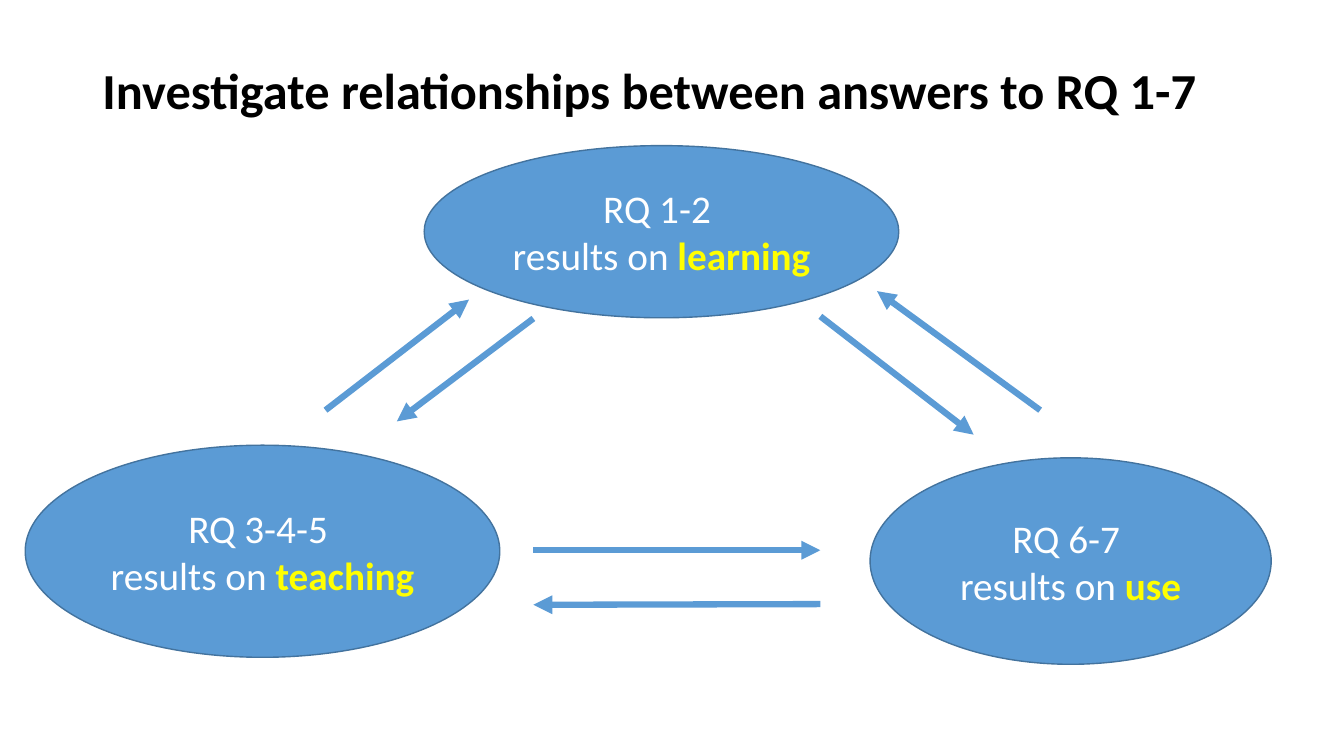
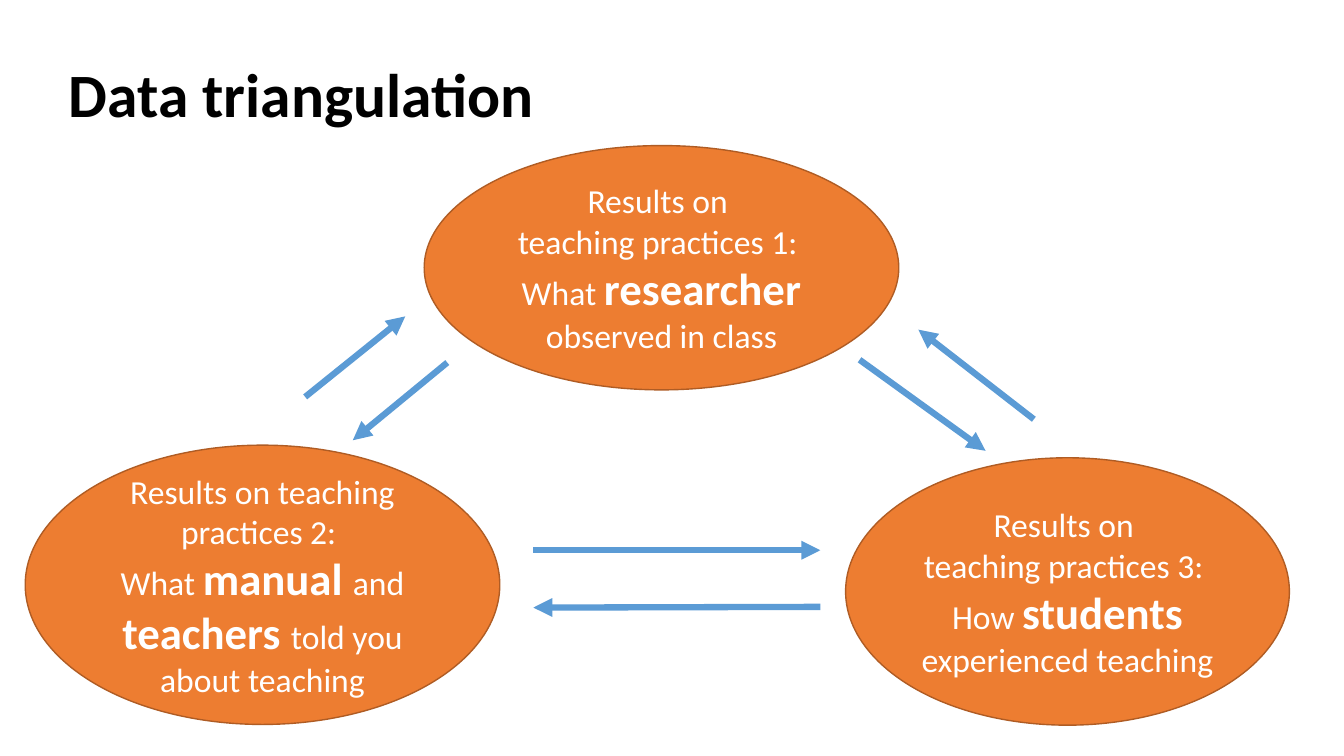
from lxml.etree import SubElement
from pptx import Presentation
from pptx.dml.color import RGBColor
from pptx.enum.shapes import MSO_CONNECTOR, MSO_SHAPE
from pptx.enum.text import MSO_ANCHOR, MSO_AUTO_SIZE, PP_ALIGN
from pptx.oxml.ns import qn
from pptx.util import Pt

COLORS = {
    "title": "000000", "text": "FFFFFF", "highlight": "FFFF00", "arrow": "5B9BD5",
    "blue": "5B9BD5", "blue_edge": "43739E",
    "orange": "ED7D31", "orange_edge": "AF5C24",
}
FONT = "Calibri"

# Content: each ellipse has a box (left, top, width, height) and paragraphs;
# each paragraph is a list of spans, where a one-item tuple is emphasised.
# Arrows run from (x, y) to (x, y).
SLIDES = [
    {
        "title": "Investigate relationships between answers to RQ 1-7",
        "title_box": (66, 29, 828, 75), "title_size": 36,
        "fill": "blue", "size": 28, "strong_size": 28, "strong_color": "highlight",
        "ellipses": [
            ((303, 104, 339, 123),
             [["RQ 1-2 "], ["results on ", ("learning",)]]),
            ((18, 318, 339, 151.5),
             [["RQ 3-4-5 "], ["results on ", ("teaching",)]]),
            ((621.5, 327, 286.5, 147.5),
             [["RQ 6-7 "], ["results on ", ("use",)]]),
        ],
        "arrows": [
            (232.5, 293, 335, 214), (381, 227.5, 283.5, 301),
            (586, 226, 695.5, 310.5), (743, 293, 626.5, 208),
            (381, 393, 586, 393), (586, 431.5, 381, 432),
        ],
    },
    {
        "title": "Data triangulation",
        "title_box": (42, 29, 852, 82), "title_size": 44,
        "fill": "orange", "size": 24, "strong_size": 32, "strong_color": "text",
        "ellipses": [
            ((303, 104, 339, 174.5),
             [["Results on "], ["teaching practices 1: "],
              ["What ", ("researcher ",), "observed in class"]]),
            ((18, 318, 339, 199.5),
             [["Results on teaching practices 2: "],
              ["What ", ("manual ",), "and ", ("teachers ",),
               "told you about teaching"]]),
            ((604, 327, 317, 191),
             [["Results on "], ["teaching practices 3: "],
              ["How ", ("students ",), "experienced teaching "]]),
        ],
        "arrows": [
            (218, 283.5, 289.5, 226), (319.5, 259, 252, 314.5),
            (614, 257, 704, 322), (738.5, 299.5, 656, 235.5),
            (381, 393, 586, 393), (586, 433.5, 381, 434),
        ],
    },
]


def color(name):
    return RGBColor.from_string(COLORS[name])


def add_span(para, text, size, color_name, bold=False):
    span = para.add_run()
    span.text = text
    span.font.name = FONT
    span.font.size = Pt(size)
    span.font.bold = bold
    span.font.color.rgb = color(color_name)


def set_title(page, content):
    title = page.shapes.title
    title.left, title.top, title.width, title.height = map(Pt, content["title_box"])
    frame = title.text_frame
    frame.auto_size = MSO_AUTO_SIZE.NONE
    frame.vertical_anchor = MSO_ANCHOR.MIDDLE
    para = frame.paragraphs[0]
    para.alignment = PP_ALIGN.LEFT
    para.line_spacing = 0.9
    add_span(para, content["title"], content["title_size"], "title", True)


def add_ellipse(page, content, box, paragraphs):
    ellipse = page.shapes.add_shape(MSO_SHAPE.OVAL, *map(Pt, box))
    ellipse.shadow.inherit = False
    ellipse.fill.solid()
    ellipse.fill.fore_color.rgb = color(content["fill"])
    ellipse.line.color.rgb = color(content["fill"] + "_edge")
    ellipse.line.width = Pt(1)
    frame = ellipse.text_frame
    frame.word_wrap = True
    frame.vertical_anchor = MSO_ANCHOR.MIDDLE
    for index, spans in enumerate(paragraphs):
        para = frame.add_paragraph() if index else frame.paragraphs[0]
        para.alignment = PP_ALIGN.CENTER
        for span in spans:
            if isinstance(span, tuple):
                add_span(para, span[0], content["strong_size"],
                         content["strong_color"], True)
            else:
                add_span(para, span, content["size"], "text")


def add_arrow(page, points):
    arrow = page.shapes.add_connector(MSO_CONNECTOR.STRAIGHT, *map(Pt, points))
    arrow.line.color.rgb = color("arrow")
    arrow.line.width = Pt(4.5)
    # Arrowhead at the end, and no theme shadow
    SubElement(arrow.line._get_or_add_ln(), qn("a:tailEnd"), type="triangle")
    SubElement(arrow._element.spPr, qn("a:effectLst"))


def main():
    deck = Presentation()
    deck.slide_width, deck.slide_height = Pt(960), Pt(540)
    title_only = deck.slide_layouts[5]
    for content in SLIDES:
        page = deck.slides.add_slide(title_only)
        set_title(page, content)
        for box, paragraphs in content["ellipses"]:
            add_ellipse(page, content, box, paragraphs)
        for points in content["arrows"]:
            add_arrow(page, points)
    deck.save("out.pptx")


if __name__ == "__main__":
    main()
